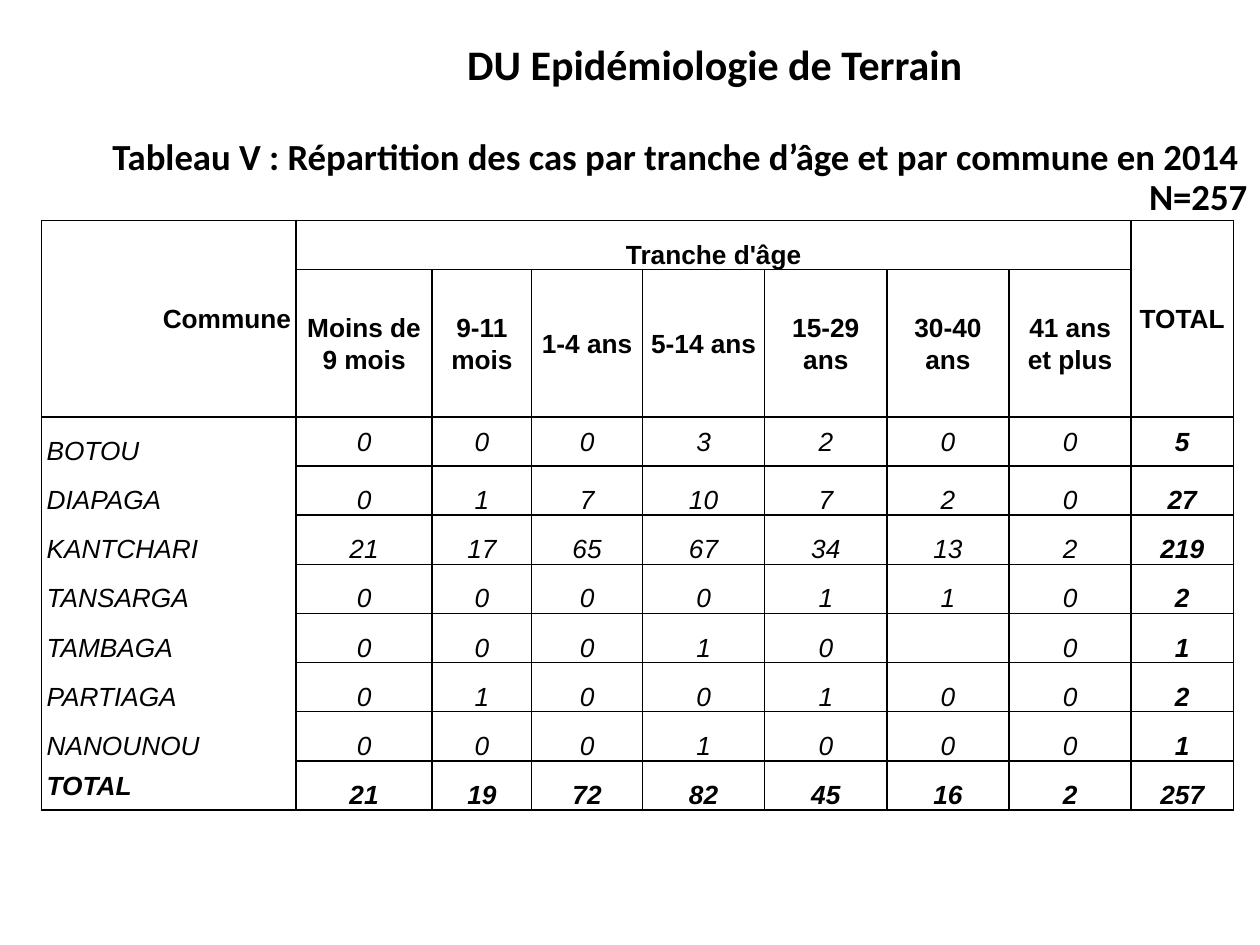
from lxml import etree
from pptx import Presentation
from pptx.dml.color import RGBColor
from pptx.enum.text import MSO_ANCHOR, MSO_AUTO_SIZE, PP_ALIGN
from pptx.oxml.ns import qn
from pptx.util import Inches, Pt

LEFT, CENTER, RIGHT = PP_ALIGN.LEFT, PP_ALIGN.CENTER, PP_ALIGN.RIGHT
MIDDLE, BOTTOM = MSO_ANCHOR.MIDDLE, MSO_ANCHOR.BOTTOM

COLORS = {"ink": "000000"}
HEADING = "DU Epidémiologie de Terrain"
TITLE = ("Tableau V\u00a0: Répartition des cas par tranche d’âge "
         "et par commune en 2014 \vN=257")
ROWS = [
    ["Commune", "Tranche d'âge", "", "", "", "", "", "", "TOTAL"],
    ["", "Moins de 9 mois", "9-11 mois", "1-4 ans", "5-14 ans",
     "15-29 ans", "30-40 ans", "41 ans et plus", ""],
    ["BOTOU", 0, 0, 0, 3, 2, 0, 0, 5],
    ["DIAPAGA", 0, 1, 7, 10, 7, 2, 0, 27],
    ["KANTCHARI", 21, 17, 65, 67, 34, 13, 2, 219],
    ["TANSARGA", 0, 0, 0, 0, 1, 1, 0, 2],
    ["TAMBAGA", 0, 0, 0, 1, 0, "", 0, 1],
    ["PARTIAGA", 0, 1, 0, 0, 1, 0, 0, 2],
    ["NANOUNOU", 0, 0, 0, 1, 0, 0, 0, 1],
    ["TOTAL", 21, 19, 72, 82, 45, 16, 2, 257],
]
COL_WIDTHS = [2.02, 1.08, 0.79, 0.88, 0.97, 0.97, 0.97, 0.97, 0.81]
ROW_HEIGHT, AGE_ROW_HEIGHT = 0.39, 1.17
MERGES = [((0, 0), (1, 0)), ((0, 1), (0, 7)), ((0, 8), (1, 8))]
HEADER_ROWS = 2
LAST_ROW, LAST_COL = len(ROWS) - 1, len(COL_WIDTHS) - 1
CELL_MARGINS = {"margin_left": Inches(0.04), "margin_right": Inches(0.04),
                "margin_top": 0, "margin_bottom": 0}


def style_font(font, name, size, bold=True, italic=False):
    values = {"name": name, "size": Pt(size), "bold": bold, "italic": italic}
    for key, value in values.items():
        setattr(font, key, value)
    font.color.rgb = RGBColor.from_string(COLORS["ink"])


def set_borders(cell, sides):
    """Draw 1 pt lines on the given sides and hide the other sides."""
    tc_pr = cell._tc.get_or_add_tcPr()
    for side in "LRTB":
        ln = etree.SubElement(tc_pr, qn(f"a:ln{side}"), w=str(Pt(1)))
        if side in sides:
            fill = etree.SubElement(ln, qn("a:solidFill"))
            etree.SubElement(fill, qn("a:srgbClr"), val=COLORS["ink"])
        else:
            etree.SubElement(ln, qn("a:noFill"))


def border_sides(row, col):
    """Commune names share one frame without lines between them."""
    if col or row < HEADER_ROWS:
        return "LRTB"
    return "LR" + "T" * (row == HEADER_ROWS) + "B" * (row == LAST_ROW)


def cell_anchor(row, col):
    if (row, col) == (0, 1):
        return BOTTOM
    if row < HEADER_ROWS or (row == HEADER_ROWS and col):
        return MIDDLE
    return MIDDLE if (row, col) == (LAST_ROW, 0) else BOTTOM


def cell_align(row, col):
    if col:
        return CENTER
    return RIGHT if row < HEADER_ROWS else LEFT


def fill_cell(cell, row, col, value):
    header = row < HEADER_ROWS
    set_borders(cell, border_sides(row, col))
    cell.fill.background()
    for key, margin in CELL_MARGINS.items():
        setattr(cell, key, margin)
    cell.vertical_anchor = cell_anchor(row, col)
    p = cell.text_frame.paragraphs[0]
    p.alignment = cell_align(row, col)
    p.line_spacing, p.space_after = 1.07, Pt(8)
    if value != "":
        r = p.add_run()
        r.text = str(value)
        bold = header or row == LAST_ROW or col == LAST_COL
        style_font(r.font, "Arial", 15, bold, italic=not header)


def add_case_table(s):
    heights = [ROW_HEIGHT] * len(ROWS)
    heights[1] = AGE_ROW_HEIGHT
    table = s.shapes.add_table(
        len(ROWS), len(COL_WIDTHS), Inches(0.33), Inches(1.75),
        Inches(sum(COL_WIDTHS)), Inches(sum(heights))).table
    table.first_row = table.horz_banding = False
    for column, width in zip(table.columns, COL_WIDTHS):
        column.width = Inches(width)
    for table_row, height in zip(table.rows, heights):
        table_row.height = Inches(height)
    for start, end in MERGES:
        table.cell(*start).merge(table.cell(*end))
    for row, values in enumerate(ROWS):
        for col, value in enumerate(values):
            fill_cell(table.cell(row, col), row, col, value)


def main():
    prs = Presentation()
    prs.slide_width, prs.slide_height = Inches(10), Inches(7.5)
    s = prs.slides.add_slide(prs.slide_layouts[5])

    box = s.shapes.add_textbox(Inches(3.61), Inches(0.26), Inches(4.17), Inches(0.5))
    box.text_frame.word_wrap = False
    r = box.text_frame.paragraphs[0].add_run()
    r.text = HEADING
    style_font(r.font, "Calibri", 24)

    title = s.shapes.title
    title.left, title.top = Inches(0.21), Inches(1.09)
    title.width, title.height = Inches(9.79), Inches(0.66)
    tf = title.text_frame
    tf.auto_size, tf.vertical_anchor = MSO_AUTO_SIZE.NONE, MIDDLE
    p = tf.paragraphs[0]
    p.text = TITLE
    p.alignment, p.line_spacing = RIGHT, 0.9
    for r in p.runs:
        style_font(r.font, "Calibri", 21)

    add_case_table(s)
    prs.save("out.pptx")


if __name__ == "__main__":
    main()
